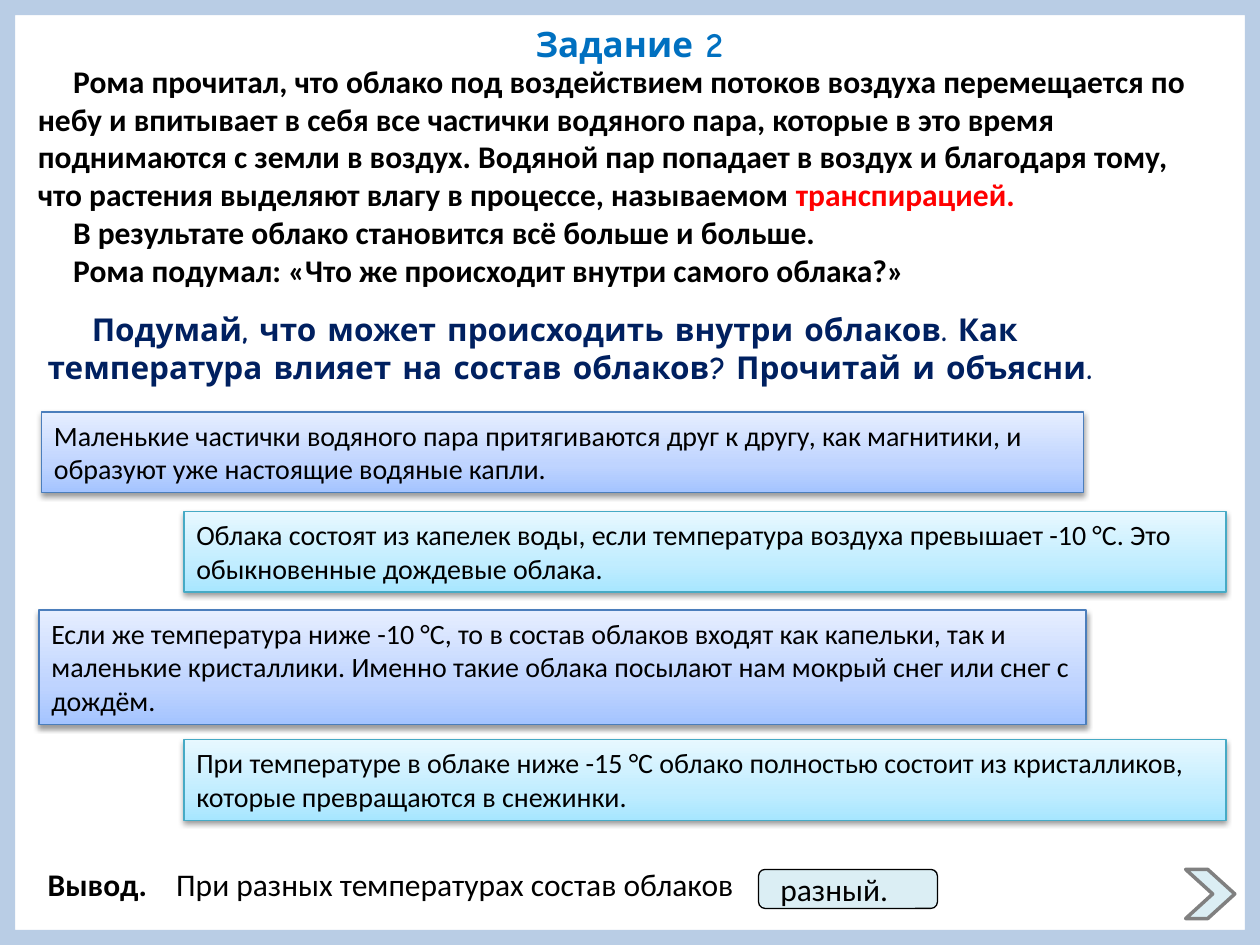
from dataclasses import dataclass
from typing import NamedTuple

from pptx import Presentation
from pptx.dml.color import RGBColor
from pptx.enum.shapes import MSO_SHAPE
from pptx.enum.text import MSO_ANCHOR, MSO_AUTO_SIZE, PP_ALIGN
from pptx.oxml import parse_xml
from pptx.oxml.ns import nsdecls
from pptx.util import Inches, Pt

COLS, ROWS = 100, 75
WIDE, HIGH = Inches(10), Inches(7.5)


class Tone(NamedTuple):
    line: str
    stops: tuple[tuple[int, str], ...]


class Box(NamedTuple):
    col: float
    row: float
    cols: float
    rows: float


class Run(NamedTuple):
    text: str
    color: str


@dataclass(frozen=True)
class Theme:
    sans: str = "Calibri"
    comic: str = "Comic Neue"
    ink: str = "000000"
    head: str = "0070C0"
    ask: str = "002060"
    hot: str = "FF0000"
    edge: str = "B9CDE5"
    pale: str = "DBEEF4"
    gray: str = "808080"
    blue: Tone = Tone("4B7EBC", ((0, "A4C4FF"), (35, "BFD4FF"), (100, "E6EEFF")))
    aqua: Tone = Tone("46AAC5", ((0, "A7E6FF"), (35, "C1EDFF"), (100, "E7F8FF")))
    big: int = 20
    mid: int = 18
    small: int = 16
    thin: float = 0.75
    thick: float = 2


THEME = Theme()


@dataclass(frozen=True)
class Style:
    size: int = THEME.mid
    face: str = THEME.sans
    bold: bool = False
    align: PP_ALIGN = PP_ALIGN.LEFT
    indent: float = 0
    wrap: bool = True
    anchor: MSO_ANCHOR = MSO_ANCHOR.TOP
    fit: MSO_AUTO_SIZE = MSO_AUTO_SIZE.SHAPE_TO_FIT_TEXT


class Card(NamedTuple):
    box: Box
    tone: Tone
    text: str


CARDS = (
    Card(Box(3.3, 32.7, 82.7, 6.4), THEME.blue,
         "Маленькие частички водяного пара притягиваются друг к другу, "
         "как магнитики, и образуют уже настоящие водяные капли."),
    Card(Box(14.6, 40.6, 82.7, 6.4), THEME.aqua,
         "Облака состоят из капелек воды, если температура воздуха "
         "превышает -10 °С. Это обыкновенные дождевые облака."),
    Card(Box(3.1, 48.4, 83.1, 9.1), THEME.blue,
         "Если же температура ниже -10 °С, то в состав облаков входят как "
         "капельки, так и маленькие кристаллики. Именно такие облака "
         "посылают нам мокрый снег или снег с дождём."),
    Card(Box(14.6, 58.7, 82.7, 6.4), THEME.aqua,
         "При температуре в облаке ниже -15 °С облако полностью состоит из "
         "кристалликов, которые превращаются в снежинки."),
)

STORY = (
    (Run("Рома прочитал, что облако под воздействием потоков воздуха "
         "перемещается по небу и впитывает в себя все частички водяного пара, "
         "которые в это время поднимаются с земли в воздух. Водяной пар "
         "попадает в воздух и благодаря тому, что растения выделяют влагу в "
         "процессе, называемом ", THEME.ink),
     Run("транспирацией.", THEME.hot)),
    (Run("В результате облако становится всё больше и больше.", THEME.ink),),
    (Run("Рома подумал: «Что же происходит внутри самого облака?»", THEME.ink),),
)


def place(box: Box) -> tuple[int, int, int, int]:
    return (round(WIDE * box.col / COLS), round(HIGH * box.row / ROWS),
            round(WIDE * box.cols / COLS), round(HIGH * box.rows / ROWS))


def move(shape, box: Box) -> None:
    shape.left, shape.top, shape.width, shape.height = place(box)


def write(shape, paras: tuple[tuple[Run, ...], ...], style: Style) -> None:
    frame = shape.text_frame
    frame.word_wrap = style.wrap
    frame.auto_size = style.fit
    frame.vertical_anchor = style.anchor
    for order, runs in enumerate(paras):
        para = frame.add_paragraph() if order else frame.paragraphs[0]
        para.alignment = style.align
        para.space_before = Pt(0)
        props = para._p.get_or_add_pPr()
        props.set("marL", "0")
        props.set("indent", str(Inches(style.indent)))
        props.append(parse_xml(f"<a:buNone {nsdecls('a')}/>"))
        para.font.size = Pt(style.size)
        para.font.name = style.face
        para.font.bold = style.bold
        for part in runs:
            run = para.add_run()
            run.text = part.text
            run.font.color.rgb = RGBColor.from_string(part.color)


def label(slide, box: Box, text: str, color: str, style: Style) -> None:
    write(slide.shapes.add_textbox(*place(box)), ((Run(text, color),),), style)


def form(slide, kind: MSO_SHAPE, box: Box, fill: str,
         line: str | None = None, width: float = THEME.thin):
    shape = slide.shapes.add_shape(kind, *place(box))
    shape.shadow.inherit = False
    shape.fill.solid()
    shape.fill.fore_color.rgb = RGBColor.from_string(fill)
    if line:
        shape.line.color.rgb = RGBColor.from_string(line)
        shape.line.width = Pt(width)
    else:
        shape.line.fill.background()
    return shape


def draw_card(slide, card: Card) -> None:
    shape = form(slide, MSO_SHAPE.RECTANGLE, card.box,
                 card.tone.stops[0][1], card.tone.line)
    stops = "".join(f'<a:gs pos="{pos * 1000}"><a:srgbClr val="{color}"/></a:gs>'
                    for pos, color in card.tone.stops)
    props = shape._element.spPr
    solid = props.find("{*}solidFill")
    props.replace(solid, parse_xml(
        f'<a:gradFill {nsdecls("a")} rotWithShape="1"><a:gsLst>{stops}</a:gsLst>'
        '<a:lin ang="16200000" scaled="0"/></a:gradFill>'))
    props.find("{*}effectLst").append(parse_xml(
        f'<a:outerShdw {nsdecls("a")} blurRad="{Pt(3.1)}" dist="{Pt(1.6)}" '
        'dir="5400000" rotWithShape="0"><a:srgbClr val="000000">'
        '<a:alpha val="38000"/></a:srgbClr></a:outerShdw>'))
    write(shape, ((Run(card.text, THEME.ink),),), Style(size=THEME.small))


def main() -> None:
    deck = Presentation()
    deck.slide_width, deck.slide_height = WIDE, HIGH
    slide = deck.slides.add_slide(deck.slide_layouts[1])
    title, body = slide.placeholders

    edge = form(slide, MSO_SHAPE.FRAME, Box(0, 0, COLS, ROWS), THEME.edge)
    edge.adjustments[0] = 0.016
    title._element.addprevious(edge._element)

    move(title, Box(41.3, 1.3, 17.3, 4.4))
    write(title, ((Run("Задание 2", THEME.head),),),
          Style(THEME.big, THEME.comic, True, PP_ALIGN.CENTER, wrap=False))
    move(body, Box(2, 4.4, 94.5, 19.2))
    write(body, STORY, Style(bold=True, indent=0.28))
    label(slide, Box(2.8, 24.1, 94.5, 7.1),
          "Подумай, что может происходить внутри облаков. Как температура "
          "влияет на состав облаков? Прочитай и объясни.",
          THEME.ask, Style(face=THEME.comic, bold=True, indent=0.35))

    for card in CARDS:
        draw_card(slide, card)

    label(slide, Box(2.8, 68.2, 10.2, 4), "Вывод.", THEME.ink, Style(bold=True))
    label(slide, Box(13, 68.2, 46.8, 4), "При разных температурах состав облаков",
          THEME.ink, Style(wrap=False))
    reply = form(slide, MSO_SHAPE.ROUNDED_RECTANGLE, Box(60.2, 69, 14.2, 3.1),
                 THEME.pale, THEME.ink)
    write(reply, ((Run("разный.", THEME.ink),),),
          Style(indent=0.06, anchor=MSO_ANCHOR.MIDDLE, fit=MSO_AUTO_SIZE.NONE))
    arrow = form(slide, MSO_SHAPE.CHEVRON, Box(94.1, 69, 3.9, 3.9),
                 THEME.pale, THEME.gray, THEME.thick)
    arrow.adjustments[0] = 0.55
    deck.save("out.pptx")


if __name__ == "__main__":
    main()
